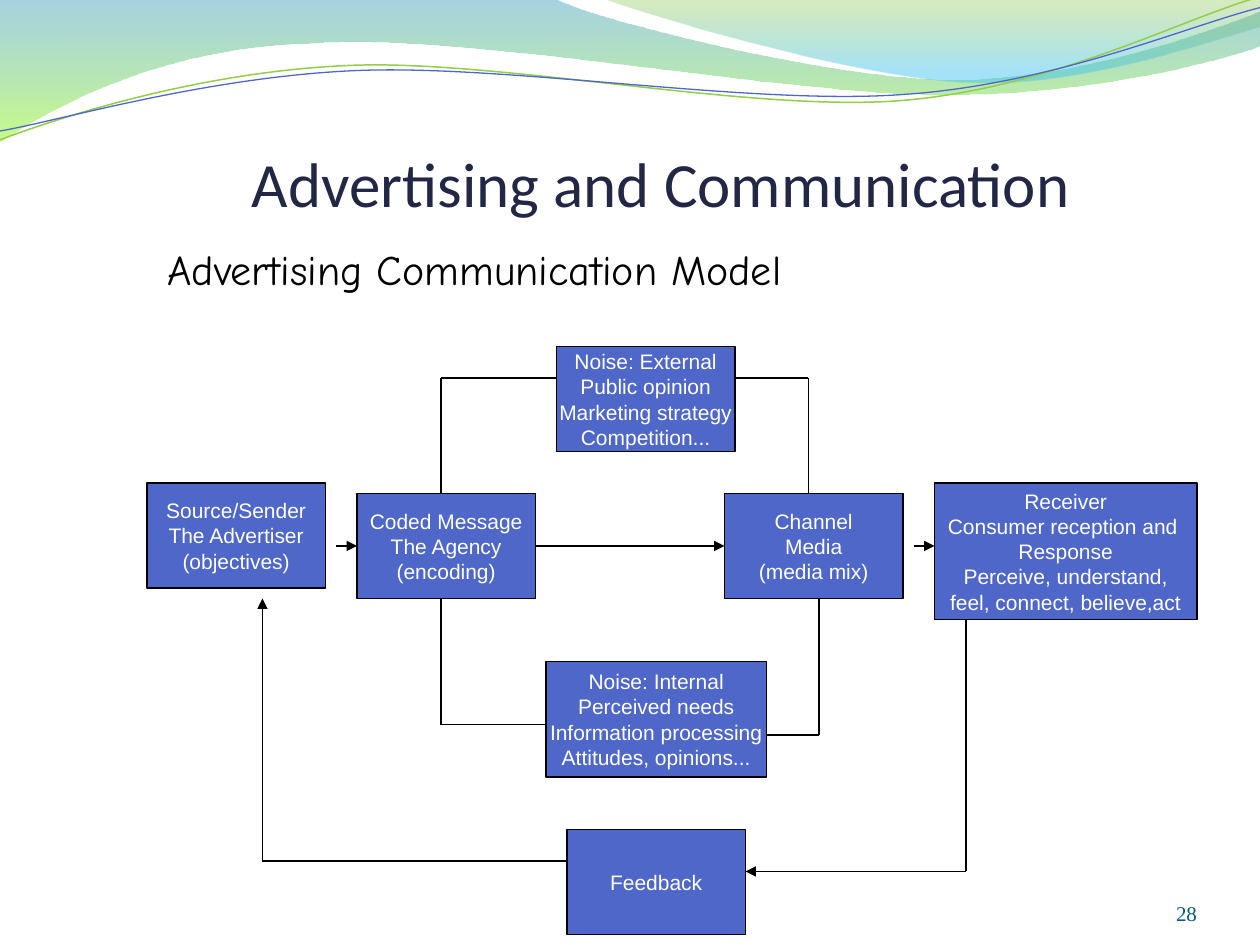
"""Build the Advertising Communication Model slide."""
from dataclasses import dataclass
from math import cos, radians, sin
from typing import NamedTuple, Optional

from lxml.etree import SubElement
from pptx import Presentation
from pptx.dml.color import RGBColor
from pptx.enum.shapes import MSO_CONNECTOR as CONN, MSO_SHAPE as SHAPE
from pptx.enum.text import MSO_ANCHOR as ANCHOR, PP_ALIGN as ALIGN
from pptx.oxml.ns import qn
from pptx.util import Inches, Pt

BLUE = RGBColor(0x4E, 0x67, 0xC8)
GREEN = RGBColor(0x93, 0xCE, 0x48)
NAVY = RGBColor(0x21, 0x27, 0x45)
TEAL = RGBColor(0x04, 0x5C, 0x75)
BLACK = RGBColor(0, 0, 0)
WHITE = RGBColor(0xFF, 0xFF, 0xFF)
BAND_TOP = RGBColor(0x3B, 0x9C, 0xBF)
BAND_BOTTOM = RGBColor(0x9C, 0xFA, 0x24)
CORNER_TOP = RGBColor(0x7E, 0xBE, 0x2C)
CORNER_BOTTOM = RGBColor(0x39, 0xC1, 0xF1)
TILT = 2.7
GRID_PER_INCH = 12


class Stop(NamedTuple):
    position: float
    color: RGBColor
    alpha: int


@dataclass
class Wave:
    frame: tuple
    start: tuple
    segments: list
    stops: tuple = ()
    color: Optional[RGBColor] = None
    width: float = 0.75


@dataclass
class Box:
    name: str
    left: int
    top: int
    lines: list
    width: int = 17
    height: int = 10


@dataclass
class Link:
    points: list
    arrow: bool = False
    begin: Optional[tuple] = None
    end: Optional[tuple] = None


@dataclass
class Label:
    text: str
    frame: tuple
    font: str
    size: int
    color: RGBColor
    align: ALIGN = ALIGN.LEFT
    anchor: ANCHOR = ANCHOR.BOTTOM
    insets: tuple = (0, 0, 0, 0)


WAVES = [
    Wave((-0.01, -0.01, 10.02, 1.14), (0, 0), [
        (4.4, -0.01),
        (4.76, 0.17, 6.64, 0.63, 7.58, 0.63), (8.53, 0.63, 9.58, 0.26, 10, 0.09),
        (10.01, 0.36),
        (9.83, 0.44, 8.7, 0.76, 7.46, 0.75), (6.22, 0.75, 3.82, 0.28, 2.57, 0.34),
        (1.29, 0.36, 0.46, 0.83, -0.01, 1.13), (0, 0),
    ], (Stop(0, BAND_TOP, 45), Stop(1, BAND_BOTTOM, 55))),
    Wave((4.79, -0.01, 5.21, 0.7), (4.79, -0.01), [
        (5.09, 0.11, 6.82, 0.62, 7.69, 0.65), (8.56, 0.69, 9.61, 0.32, 10, 0.21),
        (10, 0), (4.79, -0.01),
    ], (Stop(0, CORNER_TOP, 30), Stop(0.8, CORNER_BOTTOM, 45))),
    Wave((-0.02, 0.22, 10.02, 0.71), (0, 1.11), [
        (0.48, 0.93, 1.58, 0.57, 2.77, 0.52), (3.95, 0.47, 5.93, 0.89, 7.13, 0.8),
        (8.33, 0.71, 9.38, 0.15, 9.98, -0.02),
    ], color=GREEN, width=0.85),
    Wave((-0.02, 0.3, 10.03, 0.58), (0, 1.04), [
        (0.47, 0.96, 1.64, 0.61, 2.83, 0.56), (4.03, 0.51, 5.97, 0.84, 7.17, 0.75),
        (8.36, 0.67, 9.41, 0.21, 10, 0.06),
    ], color=BLUE),
]
LABELS = [
    Label("Advertising and Communication", (2, 0.5, 7.33, 1.25), "Calibri", 36, NAVY,
          insets=(0, 0.05, 0, 0)),
    Label("28", (8.67, 6.95, 0.83, 0.4), "Times New Roman", 12, TEAL, ALIGN.RIGHT),
    Label("Advertising Communication Model", (1.23, 1.88, 5.42, 0.5), "Comic Neue", 24,
          BLACK, anchor=ANCHOR.TOP, insets=(0.1, 0.05, 0.1, 0.05)),
]
BOXES = [
    Box("source", 14, 46, ["Source/Sender", "The Advertiser", "(objectives)"]),
    Box("message", 34, 47, ["Coded Message", "The Agency", "(encoding)"]),
    Box("channel", 69, 47, ["Channel", "Media", "(media mix)"]),
    Box("receiver", 89, 46, ["Receiver", "Consumer reception and ", "Response",
                             "Perceive, understand,", "feel, connect, believe,act"],
        25, 13),
    Box("external", 53, 33, ["Noise: External", "Public opinion",
                             "Marketing strategy", "Competition..."]),
    Box("feedback", 54, 79, ["Feedback"]),
    Box("internal", 52, 63, ["Noise: Internal", "Perceived needs",
                             "Information processing", "Attitudes, opinions..."],
        21, 11),
]
LINKS = [
    Link([(32, 52), (34, 52)], True, end=("message", 1)),
    Link([(51, 52), (69, 52)], True, ("message", 3), ("channel", 1)),
    Link([(87, 52), (89, 52)], True),
    Link([(92, 59), (92, 83), (71, 83)], True),
    Link([(54, 82), (25, 82), (25, 57)], True),
    Link([(53, 36), (42, 36), (42, 47)]),
    Link([(70, 36), (77, 36), (77, 47)]),
    Link([(52, 69), (42, 69), (42, 57)]),
    Link([(73, 70), (78, 70), (78, 57)]),
]


def grid(*units: int) -> list:
    """Convert grid units to lengths."""
    return [Inches(unit / GRID_PER_INCH) for unit in units]


def local_point(x: float, y: float, frame: tuple, tilt: float) -> tuple:
    """Return a slide point in a frame's own axes before the frame is tilted."""
    left, top, width, height = frame
    dx, dy, a = x - left - width / 2, y - top - height / 2, radians(tilt)
    return (Inches(dx * cos(a) - dy * sin(a) + width / 2),
            Inches(dx * sin(a) + dy * cos(a) + height / 2))


def draw_wave(shapes, wave: Wave) -> None:
    """Draw a translucent gradient band or a tilted open curve."""
    tilt = 0 if wave.stops else TILT
    builder = shapes.build_freeform()
    builder.add_line_segments([(Inches(1), Inches(1))], close=False)
    s = builder.convert_to_shape()
    s.left, s.top, s.width, s.height = map(Inches, wave.frame)
    s.rotation = -tilt
    s.shadow.inherit = False
    outline = next(s._element.iter(qn("a:path")))
    for child in list(outline):
        outline.remove(child)
    outline.set("w", str(s.width))
    outline.set("h", str(s.height))
    for i, seg in enumerate([wave.start] + wave.segments):
        tag = "a:moveTo" if i == 0 else "a:lnTo" if len(seg) == 2 else "a:cubicBezTo"
        step = SubElement(outline, qn(tag))
        for x, y in zip(seg[::2], seg[1::2]):
            px, py = local_point(x, y, wave.frame, tilt)
            SubElement(step, qn("a:pt"), x=str(int(px)), y=str(int(py)))
    if not wave.stops:
        s.fill.background()
        s.line.color.rgb, s.line.width = wave.color, Pt(wave.width)
        return
    SubElement(outline, qn("a:close"))
    s.fill.gradient()
    s.fill.gradient_angle = 270
    for target, stop in zip(s.fill.gradient_stops, wave.stops):
        target.position, target.color.rgb = stop.position, stop.color
    for color, stop in zip(s._element.spPr.iter(qn("a:srgbClr")), wave.stops):
        SubElement(color, qn("a:alpha"), val=str(stop.alpha * 1000))
    s.line.fill.background()


def write(p, text: str, font: str, size: int, color: RGBColor, align: ALIGN) -> None:
    """Write one uniformly styled paragraph."""
    p.text, p.alignment = text, align
    p.font.name, p.font.size, p.font.color.rgb = font, Pt(size), color


def draw_label(shapes, label: Label) -> None:
    """Draw a free-standing line of text."""
    tf = shapes.add_textbox(*map(Inches, label.frame)).text_frame
    tf.word_wrap, tf.vertical_anchor = True, label.anchor
    tf.margin_left, tf.margin_top, tf.margin_right, tf.margin_bottom = map(
        Inches, label.insets)
    write(tf.paragraphs[0], label.text, label.font, label.size, label.color, label.align)


def draw_box(shapes, box: Box):
    """Draw a model box and return its shape."""
    s = shapes.add_shape(SHAPE.RECTANGLE, *grid(box.left, box.top, box.width, box.height))
    s.shadow.inherit = False
    s.fill.solid()
    s.fill.fore_color.rgb = BLUE
    s.line.color.rgb, s.line.width = BLACK, Pt(0.75)
    tf = s.text_frame
    tf.word_wrap, tf.vertical_anchor = False, ANCHOR.MIDDLE
    for i, text in enumerate(box.lines):
        p = tf.add_paragraph() if i else tf.paragraphs[0]
        write(p, text, "Arial", 12, WHITE, ALIGN.CENTER)
    return s


def draw_link(shapes, link: Link, boxes: dict) -> None:
    """Draw a link leg by leg, with any arrowhead on the last leg."""
    for start, end in zip(link.points, link.points[1:]):
        c = shapes.add_connector(CONN.STRAIGHT, *grid(*start, *end))
        c.line.color.rgb, c.line.width = BLACK, Pt(0.75)
        if link.arrow and end == link.points[-1]:
            SubElement(c.line._get_or_add_ln(), qn("a:tailEnd"), type="triangle")
        SubElement(c._element.spPr, qn("a:effectLst"))
        if link.begin:
            c.begin_connect(boxes[link.begin[0]], link.begin[1])
        if link.end:
            c.end_connect(boxes[link.end[0]], link.end[1])


def main() -> None:
    """Build and save the slide."""
    prs = Presentation()
    prs.slide_width, prs.slide_height = Inches(10), Inches(7.5)
    shapes = prs.slides.add_slide(prs.slide_layouts[6]).shapes
    for wave in WAVES:
        draw_wave(shapes, wave)
    for label in LABELS:
        draw_label(shapes, label)
    boxes = {box.name: draw_box(shapes, box) for box in BOXES}
    for link in LINKS:
        draw_link(shapes, link, boxes)
    prs.save("out.pptx")


if __name__ == "__main__":
    main()
